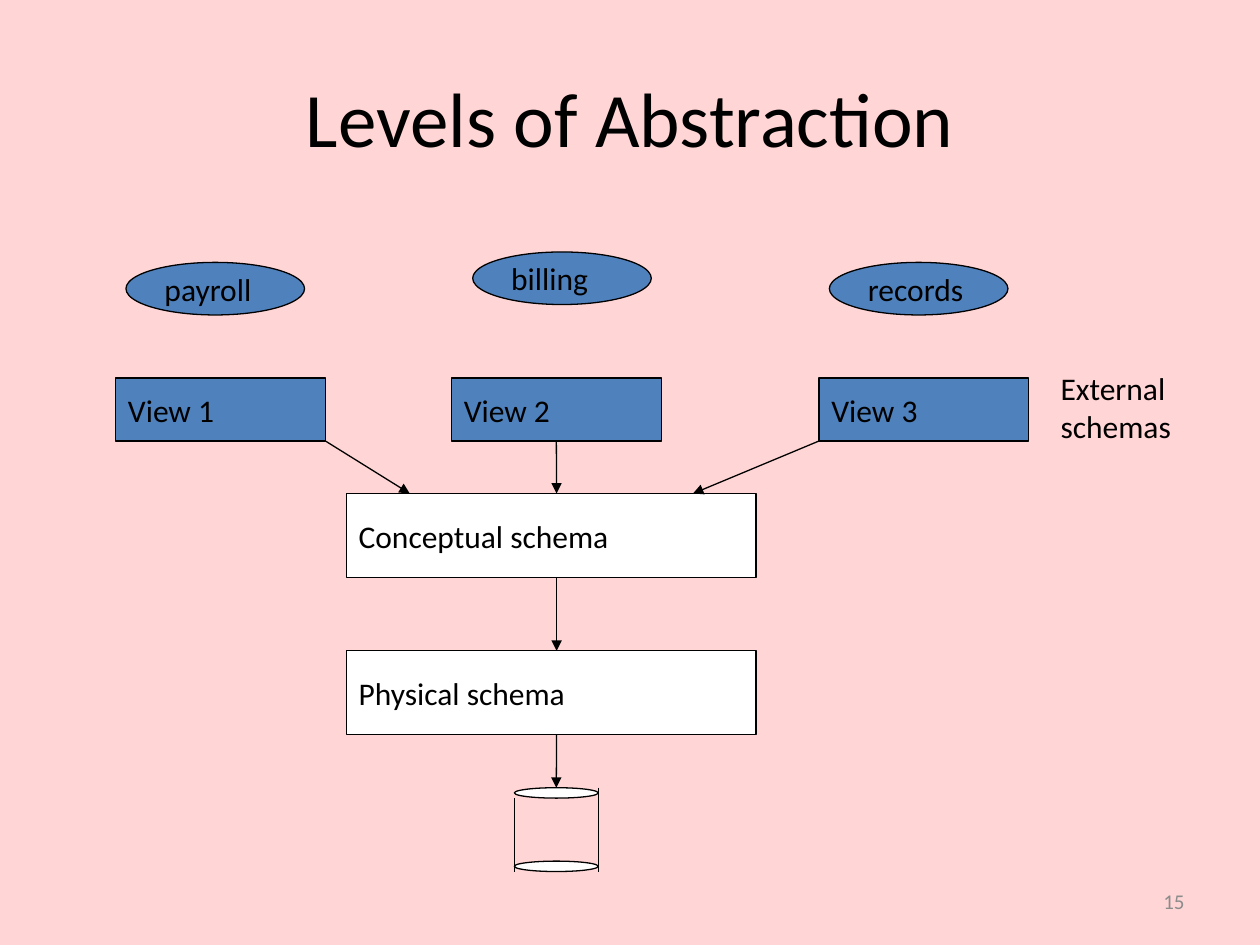
from lxml import etree
from pptx import Presentation
from pptx.dml.color import RGBColor
from pptx.enum import shapes, text
from pptx.oxml import ns
from pptx.util import Cm, Pt

PINK = RGBColor(0xFF, 0xD5, 0xD5)
BLUE = RGBColor(0x4F, 0x81, 0xBD)
WHITE = RGBColor(0xFF, 0xFF, 0xFF)
BLACK = RGBColor(0, 0, 0)
GRAY = RGBColor(0x8C, 0x8C, 0x8C)
RECTANGLE = shapes.MSO_SHAPE.RECTANGLE
OVAL = shapes.MSO_SHAPE.OVAL
LEFT, CENTER, RIGHT = text.PP_ALIGN.LEFT, text.PP_ALIGN.CENTER, text.PP_ALIGN.RIGHT
MIDDLE, TOP = text.MSO_ANCHOR.MIDDLE, text.MSO_ANCHOR.TOP

deck = Presentation()
deck.slide_width, deck.slide_height = Cm(25.4), Cm(19.05)
page = deck.slides.add_slide(deck.slide_layouts[6])
page.background.fill.solid()
page.background.fill.fore_color.rgb = PINK


def add_box(words, place, kind=None, fill=None, size=18, color=BLACK, align=LEFT, anchor=MIDDLE):
    lengths = [Cm(value) for value in place]
    if kind is None:
        box = page.shapes.add_textbox(*lengths)
    else:
        box = page.shapes.add_shape(kind, *lengths)
        box.shadow.inherit = False
        box.fill.solid()
        box.fill.fore_color.rgb = fill
        box.line.color.rgb = BLACK
        box.line.width = Pt(0.75)
    frame = box.text_frame
    frame.word_wrap = True
    frame.vertical_anchor = anchor
    frame.text = words
    for para in frame.paragraphs:
        para.alignment = align
        para.font.name = "Calibri"
        para.font.size = Pt(size)
        para.font.color.rgb = color
    return box


def add_line(start, end, arrow=True):
    line = page.shapes.add_connector(
        shapes.MSO_CONNECTOR.STRAIGHT, *[Cm(value) for value in start + end])
    line.line.color.rgb = BLACK
    line.line.width = Pt(0.75)
    if arrow:
        etree.SubElement(line.line._get_or_add_ln(), ns.qn("a:tailEnd"), type="triangle")
    etree.SubElement(line._element.spPr, ns.qn("a:effectLst"))
    return line


add_box("15", (18.21, 17.65, 5.92, 1.02), size=12, color=GRAY, align=RIGHT)
add_box("Levels of Abstraction", (1.27, 0.76, 22.86, 3.18), size=44, align=CENTER)

views = [
    add_box(f"View {number}", (left, 7.62, 4.23, 1.27), RECTANGLE, BLUE)
    for number, left in enumerate((2.33, 9.1, 16.51), 1)
]
for words, top in (("Conceptual schema", 9.95), ("Physical schema", 13.12)):
    add_box(words, (6.98, top, 8.26, 1.69), RECTANGLE, WHITE)

for words, left, top in (("payroll", 2.54, 5.29), ("billing", 9.53, 5.08), ("records", 16.72, 5.29)):
    add_box(words, (left, top, 3.6, 1.06), OVAL, BLUE)
add_box("External\nschemas", (21.13, 7.32, 3.38, 2.29), anchor=TOP)

disk_ends = [add_box("", (10.37, top, 1.69, 0.21), OVAL, WHITE) for top in (15.88, 17.36)]
add_line((10.37, 16.09), (10.37, 17.57), arrow=False)
add_line((12.06, 15.88), (12.06, 17.57), arrow=False)

add_line((6.56, 8.89), (8.26, 9.95))
add_line((16.51, 8.89), (13.97, 9.95))
view_arrow = add_line((11.22, 8.89), (11.22, 9.95))
view_arrow.begin_connect(views[1], 2)
add_line((11.22, 11.64), (11.22, 13.12))
disk_arrow = add_line((11.22, 14.81), (11.22, 15.88))
disk_arrow.end_connect(disk_ends[0], 0)

deck.save("out.pptx")
